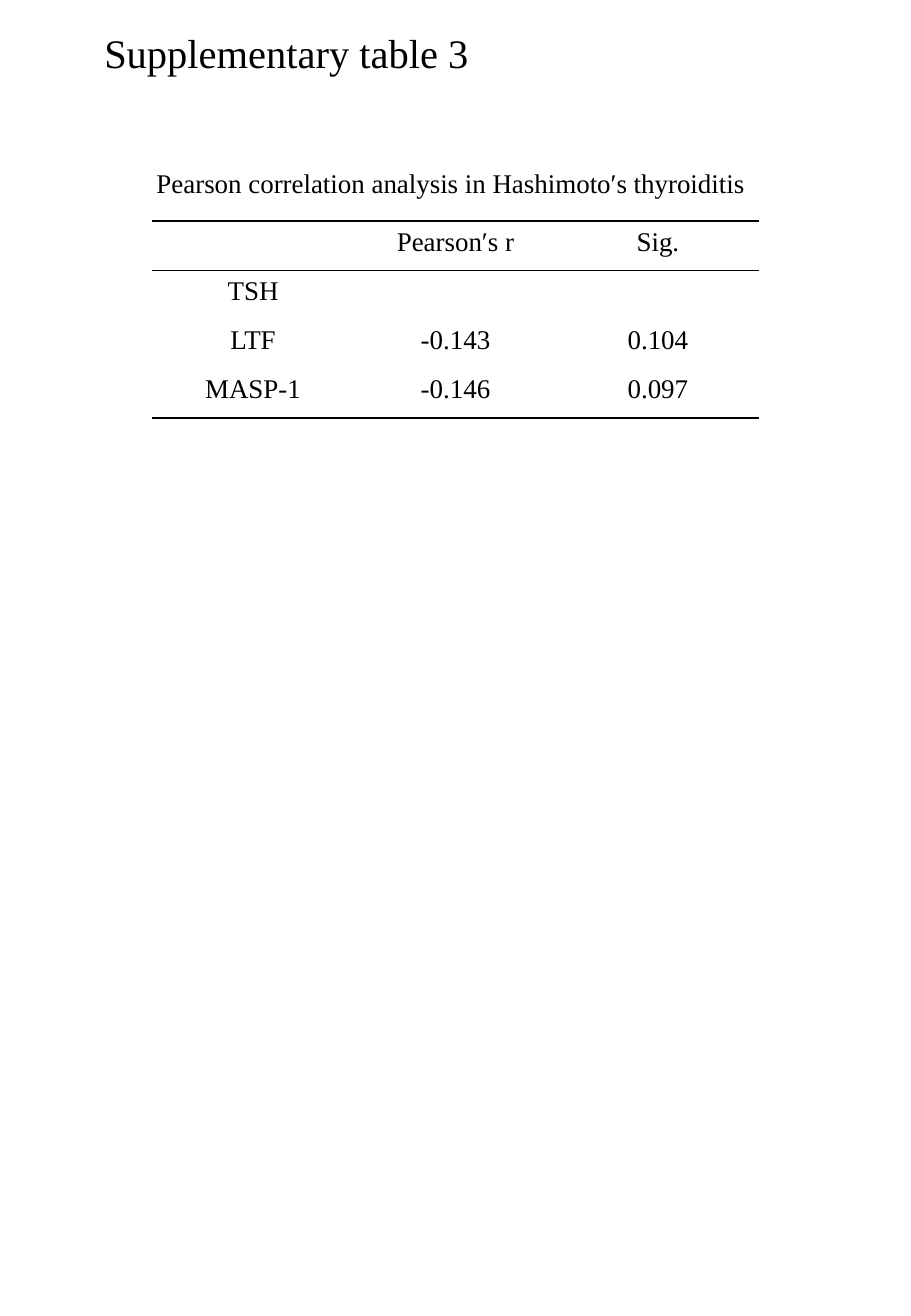
from lxml.etree import SubElement
from pptx import Presentation
from pptx.dml.color import RGBColor
from pptx.enum.text import PP_ALIGN as Align
from pptx.oxml.ns import qn
from pptx.util import Inches, Pt

BLACK = "000000"
FONT = "Times New Roman"
ROWS = [
    ["", "Pearson′s r", "Sig."],
    ["TSH", "", ""],
    ["LTF", "-0.143", "0.104"],
    ["MASP-1", "-0.146", "0.097"],
]
# Line width in points above each row, then below the last one
RULES = [1.5, 0.75, 0, 0, 1.5]


def color(value):
    return RGBColor.from_string(value)


def write(paragraph, text, size):
    run = paragraph.add_run()
    run.text = text
    run.font.color.rgb = color(BLACK)
    for name, value in {"name": FONT, "size": Pt(size)}.items():
        setattr(run.font, name, value)


def add_label(slide, text, size, left, top, width, height):
    shape = slide.shapes.add_textbox(*map(Inches, (left, top, width, height)))
    shape.text_frame.word_wrap = True
    write(shape.text_frame.paragraphs[0], text, size)


def set_border(cell, side, points):
    properties = cell._tc.get_or_add_tcPr()
    line = SubElement(properties, qn(f"a:ln{side}"), w=str(Pt(points)))
    if points:
        fill = SubElement(line, qn("a:solidFill"))
        SubElement(fill, qn("a:srgbClr"), val=BLACK)
    else:
        SubElement(line, qn("a:noFill"))


def add_correlation_table(slide, left, top, width, height):
    frame = slide.shapes.add_table(
        len(ROWS), len(ROWS[0]), *map(Inches, (left, top, width, height)))
    table = frame.table
    for name in ("first_row", "horz_banding"):
        setattr(table, name, False)
    for row, texts in enumerate(ROWS):
        for column, text in enumerate(texts):
            cell = table.cell(row, column)
            # Only horizontal rules are visible
            borders = {"L": 0, "R": 0, "T": RULES[row], "B": RULES[row + 1]}
            for side, points in borders.items():
                set_border(cell, side, points)
            cell.fill.background()
            paragraph = cell.text_frame.paragraphs[0]
            paragraph.alignment = Align.CENTER
            if text:
                write(paragraph, text, 16)


def main():
    presentation = Presentation()
    presentation.slide_width = Inches(7.5)
    presentation.slide_height = Inches(10.83)
    slide = presentation.slides.add_slide(presentation.slide_layouts[6])

    # Heading, table and caption
    add_label(slide, "Supplementary table 3", 24, 0.76, 0.18, 3.91, 0.5)
    add_correlation_table(slide, 1.25, 1.82, 5, 1.62)
    add_label(slide, "Pearson correlation analysis in Hashimoto′s thyroiditis",
              16, 1.19, 1.32, 5.9, 0.37)

    presentation.save("out.pptx")


if __name__ == "__main__":
    main()
